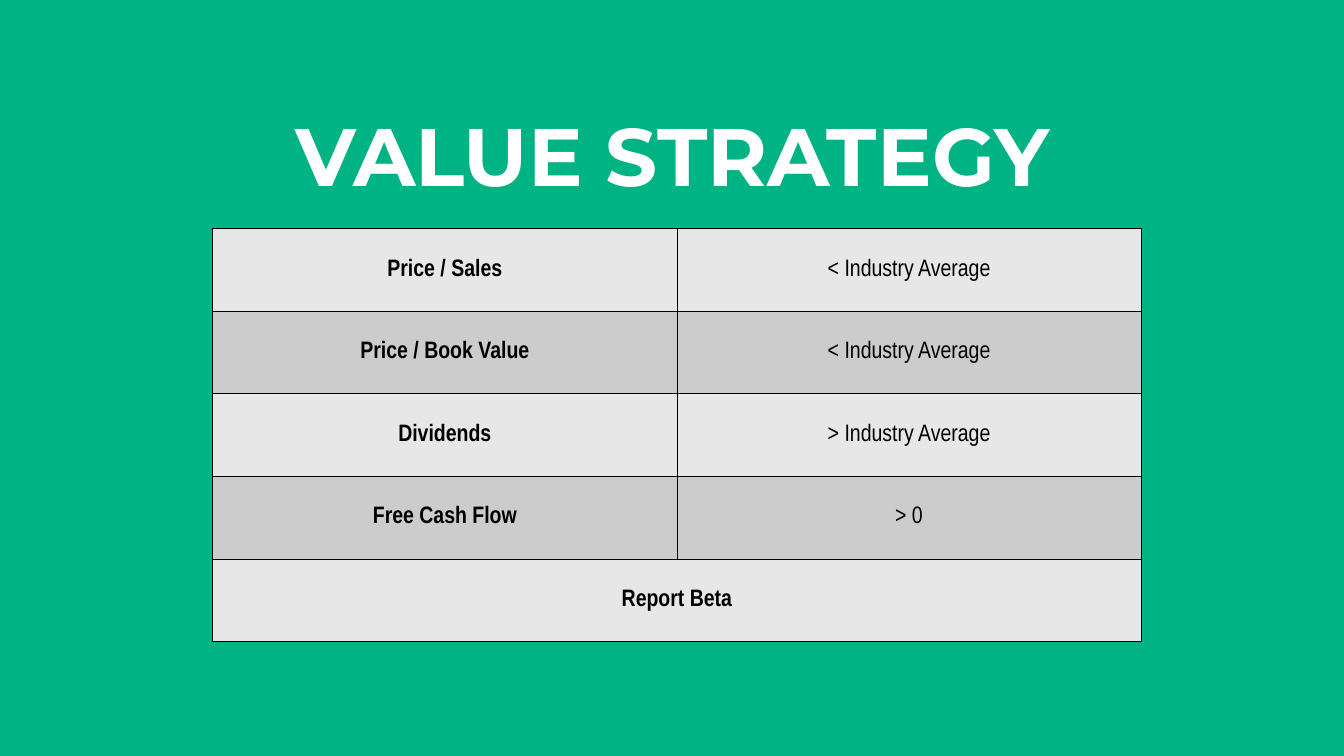
from lxml import etree
from pptx import Presentation
from pptx.dml.color import RGBColor
from pptx.enum.text import MSO_ANCHOR, PP_ALIGN
from pptx.oxml.ns import qn
from pptx.util import Inches, Pt

MIDDLE = MSO_ANCHOR.MIDDLE
CENTER = PP_ALIGN.CENTER

COLORS = {
    "background": "00B385",
    "title": "FFFFFF",
    "text": "000000",
    "border": "000000",
    "light_row": "E7E7E7",
    "dark_row": "CCCCCC",
}
CRITERIA = [
    ("Price / Sales", "< Industry Average"),
    ("Price / Book Value", "< Industry Average"),
    ("Dividends", "> Industry Average"),
    ("Free Cash Flow", "> 0"),
    ("Report Beta", ""),
]
BORDER_SIDES = ("a:lnL", "a:lnR", "a:lnT", "a:lnB")


def color(name):
    return RGBColor.from_string(COLORS[name])


def write(frame, text, font_name, size, color_name, bold):
    frame.text = text
    paragraph = frame.paragraphs[0]
    paragraph.alignment = CENTER
    font = paragraph.font
    for run in paragraph.runs:
        font = run.font
    font.name, font.size, font.bold = font_name, Pt(size), bold
    font.color.rgb = color(color_name)
    return paragraph


def add_borders(cell):
    properties = cell._tc.get_or_add_tcPr()
    for position, side in enumerate(BORDER_SIDES):
        line = etree.Element(qn(side), w=str(Pt(1)))
        fill = etree.SubElement(line, qn("a:solidFill"))
        etree.SubElement(fill, qn("a:srgbClr"), val=COLORS["border"])
        properties.insert(position, line)


def add_title(slide, box, title):
    frame = slide.shapes.add_textbox(*box).text_frame
    frame.word_wrap = True
    frame.vertical_anchor = MIDDLE
    paragraph = write(frame, title, "Montserrat", 96, "title", True)
    paragraph.line_spacing = 0.8


def add_criteria_table(slide, box, criteria):
    """Two equal columns; a criterion without a value spans both."""
    table = slide.shapes.add_table(len(criteria), 2, *box).table
    for row, texts in enumerate(criteria):
        for column, text in enumerate(texts):
            cell = table.cell(row, column)
            cell.vertical_anchor = MIDDLE
            cell.fill.solid()
            cell.fill.fore_color.rgb = color("dark_row" if row % 2 else "light_row")
            write(cell.text_frame, text, "Arial Narrow", 28, "text", column == 0)
            add_borders(cell)
        if not texts[1]:
            table.cell(row, 0).merge(table.cell(row, 1))


def main():
    presentation = Presentation()
    presentation.slide_width = Inches(21.99)
    presentation.slide_height = Inches(12.37)
    slide = presentation.slides.add_slide(presentation.slide_layouts[6])
    slide.background.fill.solid()
    slide.background.fill.fore_color.rgb = color("background")

    title_box = [Inches(length) for length in (1.11, 1.84, 19.79, 1.65)]
    table_box = [Inches(length) for length in (3.48, 3.74, 15.19, 6.76)]
    add_title(slide, title_box, "VALUE STRATEGY")
    add_criteria_table(slide, table_box, CRITERIA)
    presentation.save("out.pptx")


if __name__ == "__main__":
    main()
